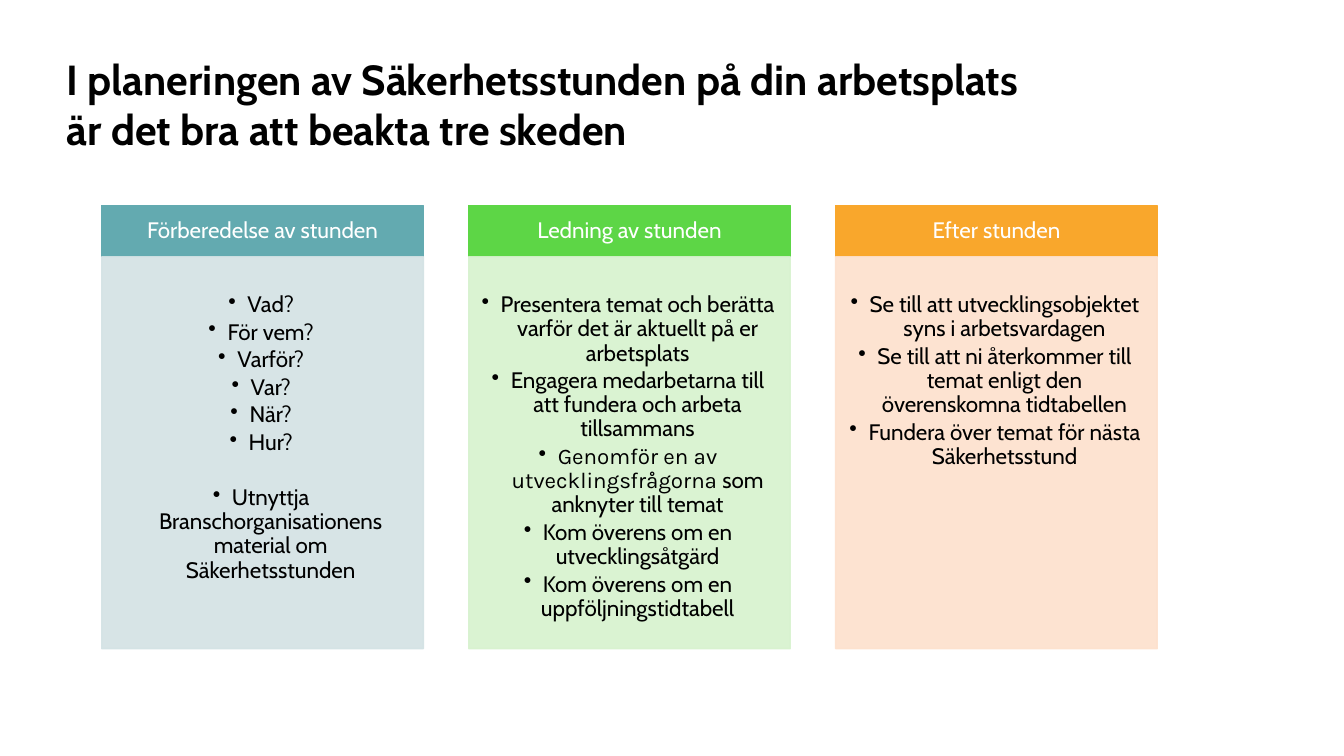
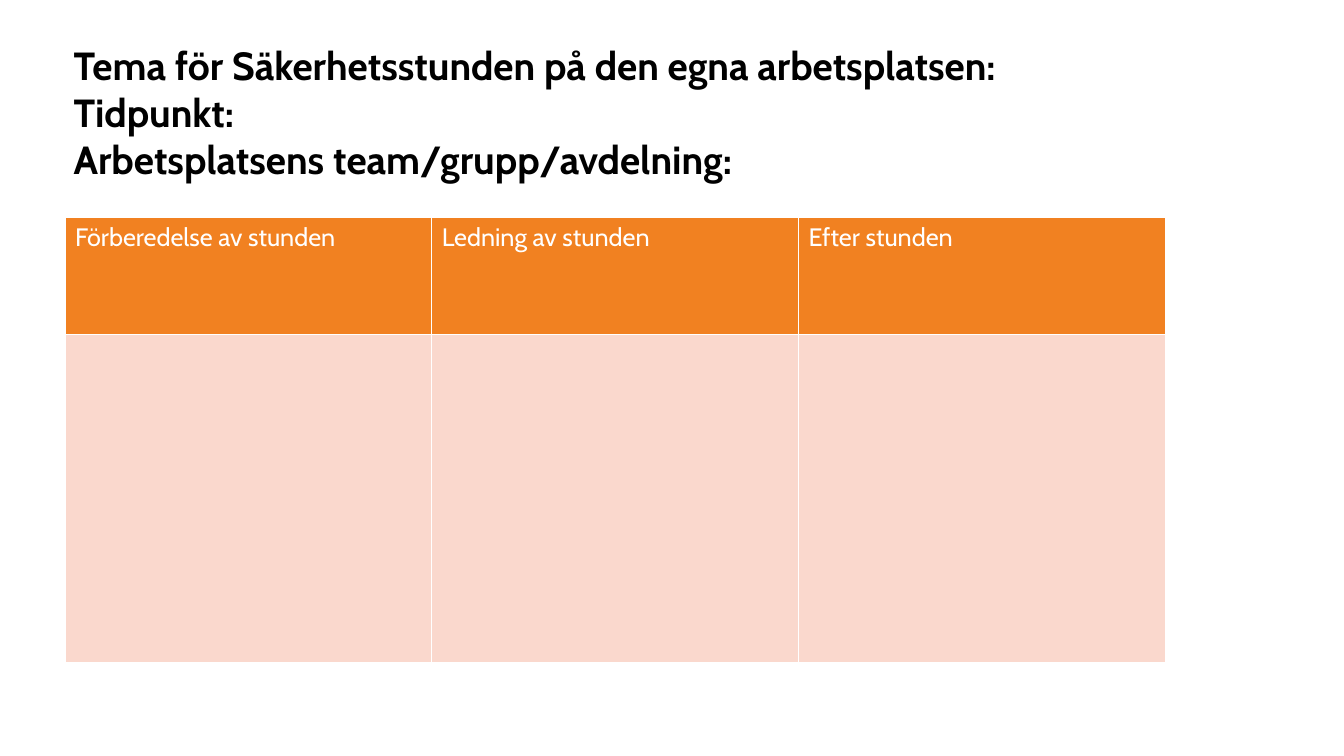
from dataclasses import dataclass

from lxml import etree
from pptx import Presentation
from pptx.dml.color import RGBColor
from pptx.enum.shapes import MSO_SHAPE
from pptx.enum.text import MSO_ANCHOR, MSO_AUTO_SIZE, PP_ALIGN
from pptx.oxml.ns import qn
from pptx.util import Pt

RECT = MSO_SHAPE.RECTANGLE
TOP, MIDDLE, BOTTOM = MSO_ANCHOR.TOP, MSO_ANCHOR.MIDDLE, MSO_ANCHOR.BOTTOM
NO_FIT = MSO_AUTO_SIZE.NONE
LEFT, CENTER = PP_ALIGN.LEFT, PP_ALIGN.CENTER

WHITE = RGBColor(0xFF, 0xFF, 0xFF)
BLACK = RGBColor(0x00, 0x00, 0x00)
TEAL = RGBColor(0x63, 0xAA, 0xB0)
PALE_TEAL = RGBColor(0xD3, 0xE2, 0xE4)
GREEN = RGBColor(0x5D, 0xD6, 0x46)
PALE_GREEN = RGBColor(0xD7, 0xF2, 0xCE)
AMBER = RGBColor(0xF9, 0xA7, 0x2C)
PALE_AMBER = RGBColor(0xFD, 0xE1, 0xCD)
ORANGE = RGBColor(0xF1, 0x81, 0x21)
PINK = RGBColor(0xFA, 0xD8, 0xCD)

FONT = "Cabin"
ALT_FONT = "Karla"
CARD_LEFT, CARD_STEP, CARD_WIDTH = 72.72, 262.08, 229.68
HEAD_TOP, HEAD_HEIGHT = 147, 36.4
BODY_TOP, BODY_HEIGHT = 183.4, 280
INDENT = 13.7
GAP_AFTER = 2.4
BLANK_LINE = 19.7


@dataclass(frozen=True)
class Box:
    left: float
    top: float
    width: float
    height: float

    def place(self) -> tuple[Pt, Pt, Pt, Pt]:
        return Pt(self.left), Pt(self.top), Pt(self.width), Pt(self.height)


@dataclass(frozen=True)
class Point:
    text: str
    lead: str = ""
    before: float = 0


@dataclass(frozen=True)
class Stage:
    name: str
    dark: RGBColor
    pale: RGBColor
    points: tuple[Point, ...]


STAGES = (
    Stage("Förberedelse av stunden", TEAL, PALE_TEAL, (
        Point("Vad?"),
        Point("För vem?"),
        Point("Varför?"),
        Point("Var?"),
        Point("När?"),
        Point("Hur?"),
        Point("Utnyttja Branschorganisationens material om Säkerhetsstunden",
              before=BLANK_LINE),
    )),
    Stage("Ledning av stunden", GREEN, PALE_GREEN, (
        Point("Presentera temat och berätta varför det är aktuellt på er arbetsplats"),
        Point("Engagera medarbetarna till att fundera och arbeta tillsammans"),
        Point("som anknyter till temat", lead="Genomför en av utvecklingsfrågorna "),
        Point("Kom överens om en utvecklingsåtgärd"),
        Point("Kom överens om en uppföljningstidtabell"),
    )),
    Stage("Efter stunden", AMBER, PALE_AMBER, (
        Point("Se till att utvecklingsobjektet syns i arbetsvardagen"),
        Point("Se till att ni återkommer till temat enligt den överenskomna tidtabellen"),
        Point("Fundera över temat för nästa Säkerhetsstund"),
    )),
)


def set_font(para, size: float, color: RGBColor, bold: bool = False) -> None:
    font = para.font
    font.name, font.size, font.bold = FONT, Pt(size), bold
    font.color.rgb = color


def set_frame(frame, anchor, left: float, top: float, right: float, bottom: float) -> None:
    frame.word_wrap = True
    frame.vertical_anchor = anchor
    frame.margin_left, frame.margin_top = Pt(left), Pt(top)
    frame.margin_right, frame.margin_bottom = Pt(right), Pt(bottom)


def add_page(deck, lines: list[str], box: Box, size: float):
    slide = deck.slides.add_slide(deck.slide_layouts[5])
    title = slide.shapes.title
    title.left, title.top, title.width, title.height = box.place()
    frame = title.text_frame
    frame.auto_size = NO_FIT
    set_frame(frame, BOTTOM, 0, 0, 0, 0)
    frame.text = "\n".join(lines)
    for para in frame.paragraphs:
        para.alignment = LEFT
        set_font(para, size, BLACK, True)
    return slide


def add_panel(slide, box: Box, color: RGBColor):
    panel = slide.shapes.add_shape(RECT, *box.place())
    panel.shadow.inherit = False
    panel.fill.solid()
    panel.fill.fore_color.rgb = color
    panel.line.color.rgb = color
    panel.line.width = Pt(1)
    return panel


def fade(panel, share: int) -> None:
    for tint in panel._element.spPr.iter(qn("a:srgbClr")):
        etree.SubElement(tint, qn("a:alpha")).set("val", str(share * 1000))


def add_point(para, point: Point) -> None:
    props = para._p.get_or_add_pPr()
    props.set("marL", str(Pt(INDENT)))
    props.set("indent", str(-Pt(INDENT)))
    etree.SubElement(props, qn("a:buChar")).set("char", "•")
    para.alignment = CENTER
    para.line_spacing = 0.9
    para.space_after = Pt(GAP_AFTER)
    if point.before:
        para.space_before = Pt(point.before)
    set_font(para, 16, BLACK)
    if point.lead:
        run = para.add_run()
        run.text = point.lead
        run.font.name = ALT_FONT
    para.add_run().text = point.text


def add_stage(slide, stage: Stage, left: float) -> None:
    head = add_panel(slide, Box(left, HEAD_TOP, CARD_WIDTH, HEAD_HEIGHT), stage.dark)
    set_frame(head.text_frame, MIDDLE, 9, 5, 9, 5)
    para = head.text_frame.paragraphs[0]
    para.text = stage.name
    para.alignment = CENTER
    para.line_spacing = 0.9
    set_font(para, 16, WHITE)

    body = add_panel(slide, Box(left, BODY_TOP, CARD_WIDTH, BODY_HEIGHT), stage.pale)
    fade(body, 90)
    frame = body.text_frame
    set_frame(frame, TOP, 6.5, 6.5 + BLANK_LINE, 8.6, 10)
    for index, point in enumerate(stage.points):
        add_point(frame.add_paragraph() if index else frame.paragraphs[0], point)


def add_edges(cell) -> None:
    props = cell._tc.get_or_add_tcPr()
    for index, side in enumerate(("a:lnL", "a:lnR", "a:lnT", "a:lnB")):
        edge = etree.Element(qn(side), w=str(Pt(1)))
        fill = etree.SubElement(edge, qn("a:solidFill"))
        etree.SubElement(fill, qn("a:srgbClr")).set("val", str(WHITE))
        props.insert(index, edge)


def add_grid(slide, box: Box, heights: tuple[float, ...]) -> None:
    grid = slide.shapes.add_table(len(heights), len(STAGES), *box.place()).table
    for col in grid.columns:
        col.width = Pt(box.width / len(STAGES))
    for row, height, color in zip(grid.rows, heights, (ORANGE, PINK)):
        row.height = Pt(height)
        for cell in row.cells:
            cell.fill.solid()
            cell.fill.fore_color.rgb = color
            add_edges(cell)
    for cell, stage in zip(grid.rows[0].cells, STAGES):
        cell.text = stage.name
        set_font(cell.text_frame.paragraphs[0], 18, WHITE)


def main() -> None:
    deck = Presentation()
    deck.slide_width, deck.slide_height = Pt(960), Pt(540)

    plan = add_page(deck, [
        "I planeringen av Säkerhetsstunden på din arbetsplats är det bra att beakta tre skeden",
    ], Box(47.5, 37.4, 694, 72.7), 30)
    for index, stage in enumerate(STAGES):
        add_stage(plan, stage, CARD_LEFT + index * CARD_STEP)

    form = add_page(deck, [
        "Tema för Säkerhetsstunden på den egna arbetsplatsen:",
        "Tidpunkt:",
        "Arbetsplatsens team/grupp/avdelning:",
    ], Box(52.6, 57.6, 742.3, 72.7), 28)
    add_grid(form, Box(46.4, 155, 786, 318), (84, 234))

    deck.save("out.pptx")


if __name__ == "__main__":
    main()
